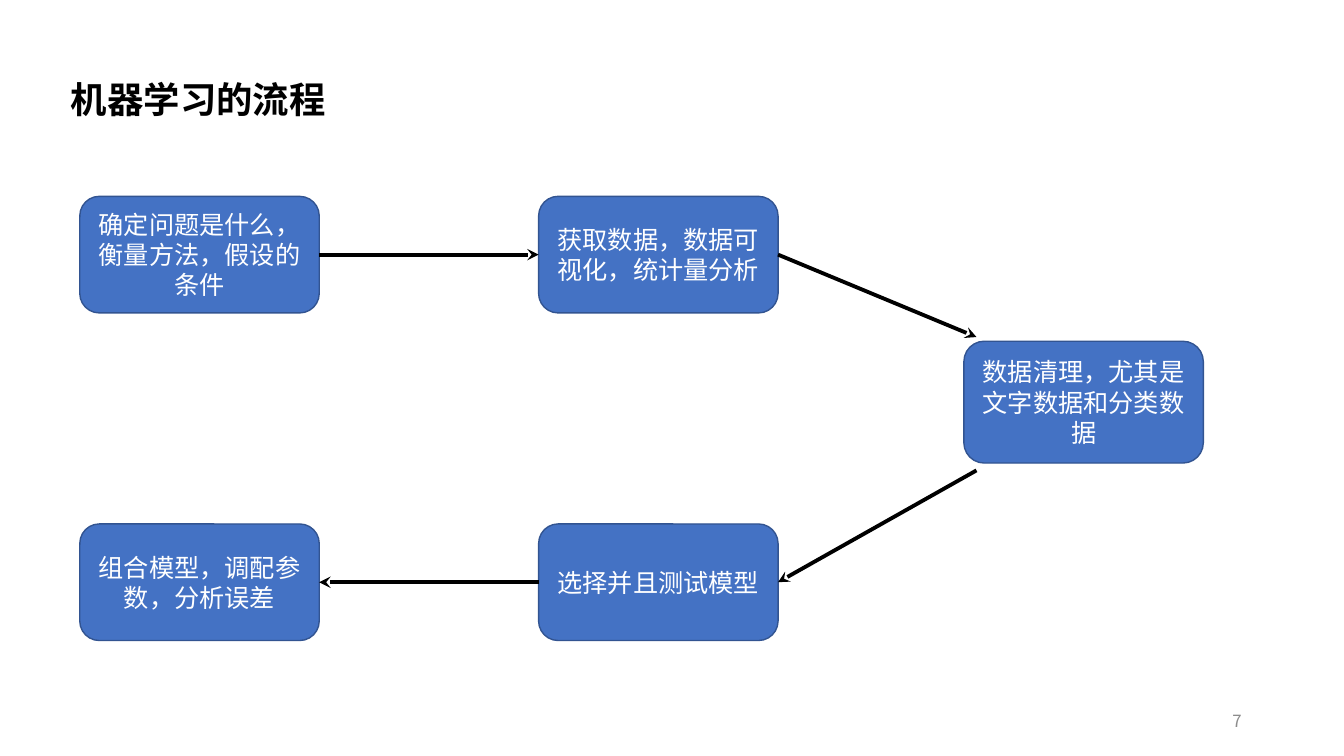
from dataclasses import dataclass
from typing import Optional

from lxml import etree
from pptx import Presentation
from pptx import util as u
from pptx.dml.color import RGBColor
from pptx.enum import shapes, text
from pptx.oxml.ns import qn

PX = 9525  # EMU per px, 96 px to the inch
LEFT, RIGHT = 1, 3  # connection sites


@dataclass(frozen=True)
class Theme:
    font: str = "Noto Sans CJK SC"
    ink: str = "000000"
    step_fill: str = "4472C4"
    step_edge: str = "325491"
    step_text: str = "FFFFFF"
    number: str = "8C8C8C"
    title_size: int = 26
    step_size: int = 18
    number_size: int = 12
    edge_width: float = 1
    arrow_width: float = 2.75


@dataclass(frozen=True)
class Step:
    label: str
    x: int
    y: int
    h: int = 111
    w: int = 228


@dataclass(frozen=True)
class Arrow:
    """A flow arrow; a step index marks an end that joins a step's side."""
    start: tuple[int, int]
    end: tuple[int, int]
    start_step: Optional[int] = None
    end_step: Optional[int] = None
    start_site: int = RIGHT
    end_site: int = LEFT


THEME = Theme()
COL_1, COL_2, COL_3 = 76, 513, 918
ROW_1, ROW_2, ROW_3 = 187, 325, 499
COL_1_END, COL_2_END = COL_1 + Step.w, COL_2 + Step.w
MID_1, MID_3 = ROW_1 + Step.h // 2, ROW_3 + Step.h // 2

STEPS = [
    Step("确定问题是什么，衡量方法，假设的条件", COL_1, ROW_1),
    Step("获取数据，数据可视化，统计量分析", COL_2, ROW_1),
    Step("数据清理，尤其是文字数据和分类数据", COL_3, ROW_2, h=116),
    Step("选择并且测试模型", COL_2, ROW_3),
    Step("组合模型，调配参数，分析误差", COL_1, ROW_3),
]
ARROWS = [
    Arrow((COL_1_END, MID_1), (COL_2, MID_1), 0, 1),
    Arrow((COL_2_END, MID_1), (930, 321), start_step=1),
    Arrow((930, 448), (COL_2_END, MID_3), end_step=3, end_site=RIGHT),
    Arrow((COL_2, MID_3), (COL_1_END, MID_3), 3, 4, LEFT, RIGHT),
]


def px(*lengths: int) -> list[u.Emu]:
    return [u.Emu(length * PX) for length in lengths]


def write(shape, words: str, size: int, color: str, align, anchor, bold: bool = False):
    """Put one run of text in a shape and return its paragraph."""
    frame = shape.text_frame
    frame.word_wrap = True
    frame.vertical_anchor = anchor
    paragraph = frame.paragraphs[0]
    paragraph.alignment = align
    run = paragraph.add_run()
    run.text = words
    font = run.font
    font.name, font.size, font.bold = THEME.font, u.Pt(size), bold
    font.color.rgb = RGBColor.from_string(color)
    east_asian = etree.SubElement(font._element, qn("a:ea"))
    east_asian.set("typeface", THEME.font)
    return paragraph


def draw_step(slide, step: Step):
    box = slide.shapes.add_shape(
        shapes.MSO_SHAPE.ROUNDED_RECTANGLE, *px(step.x, step.y, step.w, step.h))
    box.shadow.inherit = False
    box.fill.solid()
    box.fill.fore_color.rgb = RGBColor.from_string(THEME.step_fill)
    box.line.color.rgb = RGBColor.from_string(THEME.step_edge)
    box.line.width = u.Pt(THEME.edge_width)
    write(box, step.label, THEME.step_size, THEME.step_text,
          text.PP_ALIGN.CENTER, text.MSO_ANCHOR.MIDDLE)
    return box


def draw_arrow(slide, arrow: Arrow, boxes: list) -> None:
    line = slide.shapes.add_connector(
        shapes.MSO_CONNECTOR.STRAIGHT, *px(*arrow.start, *arrow.end))
    if arrow.start_step is not None:
        line.begin_connect(boxes[arrow.start_step], arrow.start_site)
    if arrow.end_step is not None:
        line.end_connect(boxes[arrow.end_step], arrow.end_site)
    line.line.color.rgb = RGBColor.from_string(THEME.ink)
    line.line.width = u.Pt(THEME.arrow_width)
    properties = line._element.spPr
    head = etree.SubElement(properties.find(qn("a:ln")), qn("a:tailEnd"))
    head.set("type", "stealth")
    etree.SubElement(properties, qn("a:effectLst"))


def main() -> None:
    deck = Presentation()
    deck.slide_width, deck.slide_height = px(1280, 720)
    slide = deck.slides.add_slide(deck.slide_layouts[6])

    # Title
    title = slide.shapes.add_textbox(*px(58, 73, 1104, 596))
    heading = write(title, "机器学习的流程", THEME.title_size, THEME.ink,
                    text.PP_ALIGN.LEFT, text.MSO_ANCHOR.TOP, bold=True)
    heading.line_spacing = 0.9
    heading.space_before = u.Pt(10)

    # Process steps and the arrows between them
    boxes = [draw_step(slide, step) for step in STEPS]
    for arrow in ARROWS:
        draw_arrow(slide, arrow, boxes)

    # Page number
    page_number = slide.shapes.add_textbox(*px(904, 667, 288, 38))
    write(page_number, "7", THEME.number_size, THEME.number,
          text.PP_ALIGN.RIGHT, text.MSO_ANCHOR.MIDDLE)

    deck.save("out.pptx")


if __name__ == "__main__":
    main()
